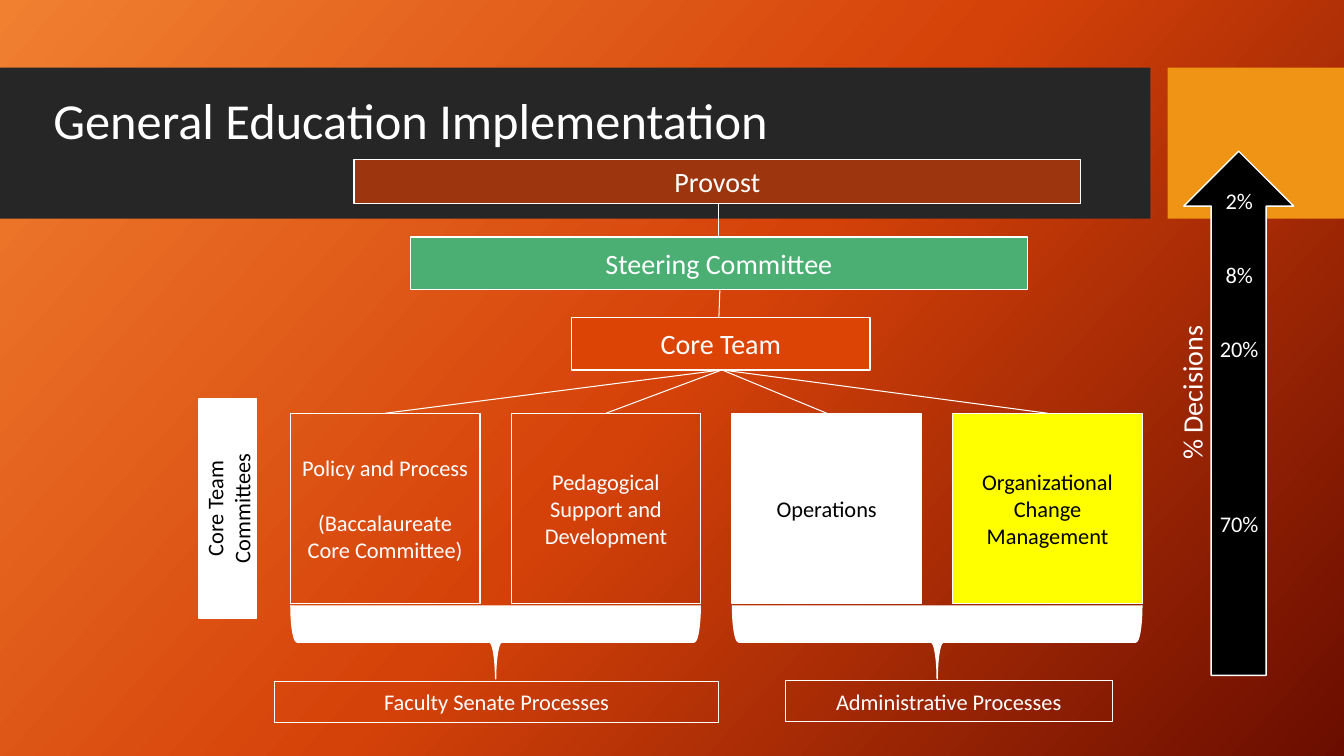
from copy import deepcopy
from dataclasses import dataclass

from pptx import Presentation
from pptx import util as u
from pptx.dml.color import RGBColor
from pptx.enum import shapes, text
from pptx.oxml import parse_xml
from pptx.oxml.ns import nsdecls

SHAPE = shapes.MSO_SHAPE


@dataclass(frozen=True)
class Theme:
    font: str = "Calibri"
    white: str = "FFFFFF"
    black: str = "000000"
    band: str = "262626"
    accent: str = "F09415"
    provost: str = "9D360E"
    steering: str = "4BAF73"
    core: str = "DC4405"
    highlight: str = "FFFF00"
    backdrop: tuple = ((0, "F18031"), (0.5, "D54209"), (1, "6A0D00"))
    backdrop_angle: int = 42
    title_size: int = 36
    large: int = 20
    small: int = 16
    outline: float = 1
    thin: float = 0.75


class SlideBuilder:
    def __init__(self, page, theme):
        self.page = page
        self.theme = theme

    def background(self):
        fill = self.page.background.fill
        fill.gradient()
        fill.gradient_angle = 360 - self.theme.backdrop_angle
        stop_list = self.page.element.xpath(".//a:gsLst")[0]
        stop_list.insert(1, deepcopy(stop_list[0]))
        for stop, (position, color) in zip(fill.gradient_stops, self.theme.backdrop):
            stop.position = position
            stop.color.rgb = RGBColor.from_string(color)

    def set_text(self, shape, wording, size, color, align=text.PP_ALIGN.CENTER):
        frame = shape.text_frame
        frame.word_wrap = True
        frame.text = wording
        for para in frame.paragraphs:
            para.alignment = align
            for span in para.runs:
                span.font.name = self.theme.font
                span.font.size = u.Pt(size)
                span.font.color.rgb = RGBColor.from_string(color)
        return frame

    def title(self, wording, left, top, width, height):
        """Fill the title placeholder and bring it in front of the bands."""
        title = self.page.shapes.title
        title.left, title.top = u.Inches(left), u.Inches(top)
        title.width, title.height = u.Inches(width), u.Inches(height)
        frame = self.set_text(title, wording, self.theme.title_size,
                              self.theme.white, text.PP_ALIGN.LEFT)
        frame.vertical_anchor = text.MSO_ANCHOR.MIDDLE
        frame.paragraphs[0].line_spacing = 0.9
        title.element.getparent().append(title.element)

    def shape(self, left, top, width, height, fill=None, line=None,
              kind=SHAPE.RECTANGLE, rotation=0):
        shape = self.page.shapes.add_shape(
            kind, u.Inches(left), u.Inches(top), u.Inches(width), u.Inches(height))
        shape.shadow.inherit = False
        shape.rotation = rotation
        if fill:
            shape.fill.solid()
            shape.fill.fore_color.rgb = RGBColor.from_string(fill)
        else:
            shape.fill.background()
        if line:
            shape.line.color.rgb = RGBColor.from_string(self.theme.white)
            shape.line.width = u.Pt(line)
        else:
            shape.line.fill.background()
        return shape

    def box(self, wording, left, top, width, height, size, fill=None,
            color=None, line=None, rotation=0):
        box = self.shape(left, top, width, height, fill,
                         line or self.theme.outline, rotation=rotation)
        frame = self.set_text(box, wording, size, color or self.theme.white)
        frame.vertical_anchor = text.MSO_ANCHOR.MIDDLE
        return frame

    def label(self, wording, left, top, width, height, size, rotation=0,
              align=text.PP_ALIGN.CENTER):
        label = self.page.shapes.add_textbox(
            u.Inches(left), u.Inches(top), u.Inches(width), u.Inches(height))
        label.rotation = rotation
        self.set_text(label, wording, size, self.theme.white, align)

    def line(self, x1, y1, x2, y2):
        line = self.page.shapes.add_connector(
            shapes.MSO_CONNECTOR.STRAIGHT,
            u.Inches(x1), u.Inches(y1), u.Inches(x2), u.Inches(y2))
        line.line.color.rgb = RGBColor.from_string(self.theme.white)
        line.line.width = u.Pt(self.theme.thin)
        line.element.spPr.append(parse_xml(f"<a:effectLst {nsdecls('a')}/>"))


def build_hierarchy(slide, theme):
    for wording, left, top, width, height, fill in (
            ("Provost", 3.51, 1.58, 7.21, 0.44, theme.provost),
            ("Steering Committee", 4.07, 2.35, 6.12, 0.52, theme.steering),
            ("Core Team", 5.67, 3.15, 2.96, 0.52, theme.core)):
        slide.box(wording, left, top, width, height, theme.large, fill)
    slide.line(7.13, 2.02, 7.13, 2.35)
    slide.line(7.14, 2.87, 7.13, 3.15)


def build_committees(slide, theme):
    first_left, step, top, width, height = 2.88, 2.19, 4.1, 1.88, 1.89
    committees = (
        ("Policy and Process\n(Baccalaureate Core Committee)", None, theme.white),
        ("Pedagogical Support and Development", None, theme.white),
        ("Operations", theme.white, theme.black),
        ("Organizational Change Management", theme.highlight, theme.black))
    for index, (wording, fill, color) in enumerate(committees):
        left = first_left + index * step
        frame = slide.box(wording, left, top, width, height, theme.small, fill, color)
        for para in frame.paragraphs[1:]:
            para.space_before = u.Pt(19.5)
        slide.line(7.16, 3.67, left + width / 2, top)
    slide.box("Core Team Committees", 1.17, 4.76, 2.18, 0.57, theme.small,
              theme.white, theme.black, rotation=270)


def build_processes(slide, theme):
    for wording, left, top, width, brace_left in (
            ("Faculty Senate Processes", 2.72, 6.76, 4.41, 4.55),
            ("Administrative Processes", 7.79, 6.75, 3.24, 8.93)):
        slide.shape(brace_left, 4.34, 0.73, 4.06, theme.white, theme.outline,
                    SHAPE.RIGHT_BRACE, rotation=90)
        slide.box(wording, left, top, width, 0.41, theme.small, line=theme.thin)


def build_decision_arrow(slide, theme):
    slide.shape(11.74, 1.5, 1.09, 5.2, theme.black, theme.outline, SHAPE.UP_ARROW)
    slide.label("% Decisions", 10.83, 3.45, 1.98, 0.44, theme.large, 270,
                text.PP_ALIGN.LEFT)
    for share, top in (("2%", 1.81), ("8%", 2.54), ("20%", 3.28), ("70%", 5.01)):
        slide.label(share, 11.93, top, 0.72, 0.37, theme.small)


def main():
    theme = Theme()
    deck = Presentation()
    deck.slide_width, deck.slide_height = u.Inches(13.33), u.Inches(7.5)
    slide = SlideBuilder(deck.slides.add_slide(deck.slide_layouts[5]), theme)
    slide.background()
    slide.shape(0, 0.67, 11.41, 1.5, theme.band)
    slide.shape(11.58, 0.67, 1.75, 1.5, theme.accent)
    slide.title("General Education Implementation", 0.43, 0.77, 8.82, 0.91)
    build_hierarchy(slide, theme)
    build_committees(slide, theme)
    build_processes(slide, theme)
    build_decision_arrow(slide, theme)
    deck.save("out.pptx")


if __name__ == "__main__":
    main()
